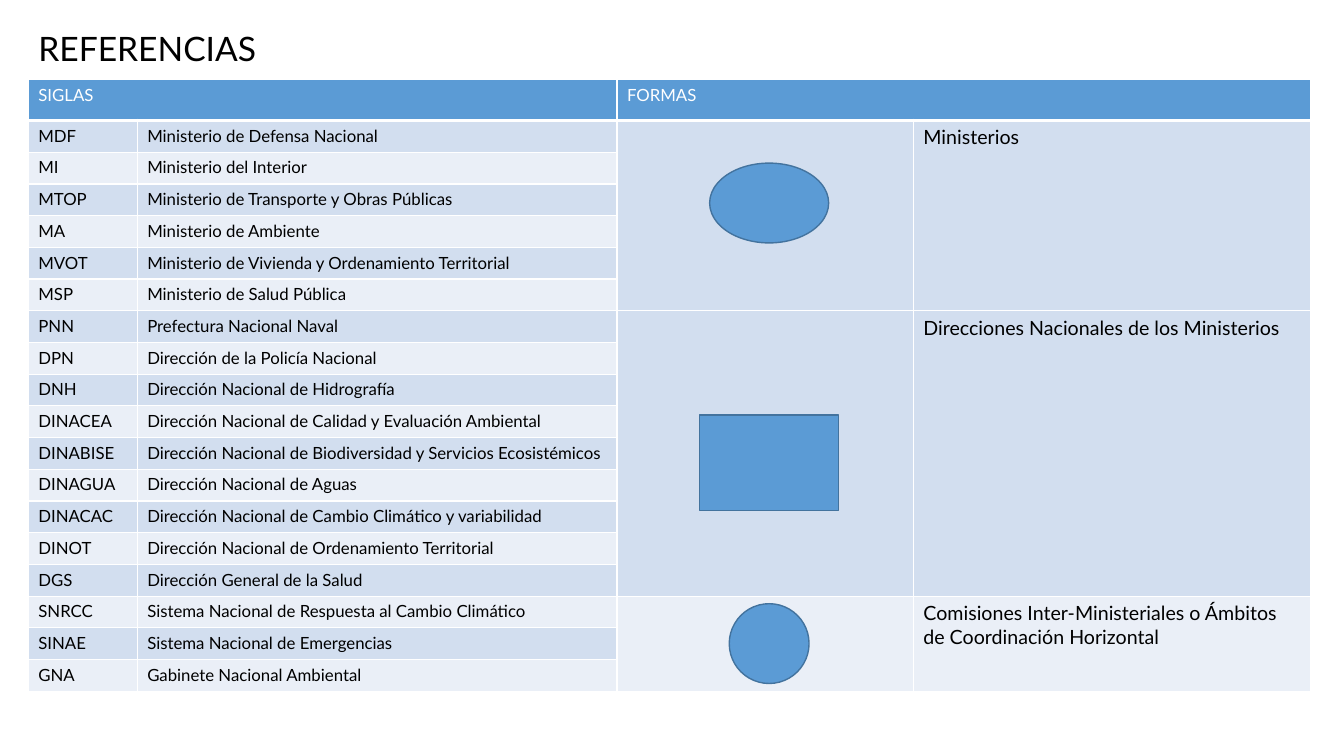
"""Build the REFERENCIAS slide: a table of acronyms beside a key of shapes."""
from lxml.etree import SubElement
from pptx import Presentation
from pptx.dml.color import RGBColor
from pptx.enum.shapes import MSO_SHAPE
from pptx.enum.text import MSO_ANCHOR, PP_ALIGN
from pptx.oxml.ns import qn
from pptx.util import Pt

TITLE = "REFERENCIAS"
HEADINGS = {0: "SIGLAS", 2: "FORMAS"}
ACRONYMS = [
    ("MDF", "Ministerio de Defensa Nacional"),
    ("MI", "Ministerio del Interior"),
    ("MTOP", "Ministerio de Transporte y Obras Públicas"),
    ("MA", "Ministerio de Ambiente"),
    ("MVOT", "Ministerio de Vivienda y Ordenamiento Territorial"),
    ("MSP", "Ministerio de Salud Pública"),
    ("PNN", "Prefectura Nacional Naval"),
    ("DPN", "Dirección de la Policía Nacional"),
    ("DNH", "Dirección Nacional de Hidrografía"),
    ("DINACEA", "Dirección Nacional de Calidad y Evaluación Ambiental"),
    ("DINABISE", "Dirección Nacional de Biodiversidad y Servicios Ecosistémicos"),
    ("DINAGUA", "Dirección Nacional de Aguas"),
    ("DINACAC", "Dirección Nacional de Cambio Climático y variabilidad"),
    ("DINOT", "Dirección Nacional de Ordenamiento Territorial"),
    ("DGS", "Dirección General de la Salud"),
    ("SNRCC", "Sistema Nacional de Respuesta al Cambio Climático"),
    ("SINAE", "Sistema Nacional de Emergencias"),
    ("GNA", "Gabinete Nacional Ambiental"),
]
GROUPS = [
    {"rows": 6, "label": "Ministerios", "shape": MSO_SHAPE.OVAL,
     "size": (85, 57), "middle": 145},
    {"rows": 9, "label": "Direcciones Nacionales de los Ministerios",
     "shape": MSO_SHAPE.RECTANGLE, "size": (99.4, 68), "middle": 330.5},
    {"rows": 3, "label": "Comisiones Inter-Ministeriales o Ámbitos de Coordinación Horizontal",
     "shape": MSO_SHAPE.OVAL, "size": (57, 57), "middle": 459.7},
]
COLORS = {"blue": "5B9BD5", "outline": "43739E", "dark band": "D2DEEF",
          "light band": "EAEFF7", "white": "FFFFFF", "black": "000000"}
FONT = "Lato"
COLUMNS = (77.8, 342.7, 211.7, 283.7)
HEADER_HEIGHT, ROW_HEIGHT = 29.2, 22.65
TABLE_LEFT, TABLE_TOP = 20.2, 56.9
SHAPE_CENTER = 549.4


def color(name):
    return RGBColor.from_string(COLORS[name])


def write(frame, text, size=12, ink="black", anchor=MSO_ANCHOR.TOP, spacing=None):
    frame.vertical_anchor = anchor
    para = frame.paragraphs[0]
    para.alignment = PP_ALIGN.LEFT
    para.line_spacing = spacing
    span = para.add_run()
    span.text = text
    span.font.name = FONT
    span.font.size = Pt(size)
    span.font.color.rgb = color(ink)


def style_cell(cell, fill, bottom=1):
    properties = cell._tc.get_or_add_tcPr()
    for side, width in (("L", 1), ("R", 1), ("T", 1), ("B", bottom)):
        line = SubElement(properties, qn(f"a:ln{side}"), w=str(Pt(width)))
        solid = SubElement(line, qn("a:solidFill"))
        SubElement(solid, qn("a:srgbClr"), val=COLORS["white"])
    cell.fill.solid()
    cell.fill.fore_color.rgb = color(fill)


def band(row):
    return "dark band" if row % 2 else "light band"


def add_references(page):
    count = len(ACRONYMS) + 1
    height = HEADER_HEIGHT + ROW_HEIGHT * len(ACRONYMS)
    table = page.shapes.add_table(count, len(COLUMNS), Pt(TABLE_LEFT), Pt(TABLE_TOP),
                                  Pt(sum(COLUMNS)), Pt(height)).table
    for column, width in zip(table.columns, COLUMNS):
        column.width = Pt(width)
    for index, row in enumerate(table.rows):
        row.height = Pt(ROW_HEIGHT if index else HEADER_HEIGHT)

    for column, heading in HEADINGS.items():
        table.cell(0, column).merge(table.cell(0, column + 1))
        write(table.cell(0, column).text_frame, heading, ink="white")
    for column in range(len(COLUMNS)):
        style_cell(table.cell(0, column), "blue", bottom=3)

    for row, texts in enumerate(ACRONYMS, start=1):
        for column, text in enumerate(texts):
            style_cell(table.cell(row, column), band(row))
            write(table.cell(row, column).text_frame, text)

    first = 1
    for group in GROUPS:
        last = first + group["rows"] - 1
        for column in (2, 3):
            table.cell(first, column).merge(table.cell(last, column))
            for row in range(first, last + 1):
                style_cell(table.cell(row, column), band(first))
        write(table.cell(first, 3).text_frame, group["label"], size=14,
              anchor=MSO_ANCHOR.MIDDLE)
        first = last + 1


def add_key_shape(page, group):
    width, height = group["size"]
    shape = page.shapes.add_shape(group["shape"], Pt(SHAPE_CENTER - width / 2),
                                  Pt(group["middle"] - height / 2), Pt(width), Pt(height))
    shape.shadow.inherit = False
    shape.fill.solid()
    shape.fill.fore_color.rgb = color("blue")
    shape.line.color.rgb = color("outline")
    shape.line.width = Pt(1)


def main():
    deck = Presentation()
    deck.slide_width, deck.slide_height = Pt(960), Pt(540)
    page = deck.slides.add_slide(deck.slide_layouts[5])
    title = page.shapes.title
    title.left, title.top, title.width, title.height = Pt(20.2), Pt(15.8), Pt(828), Pt(41)
    write(title.text_frame, TITLE, size=24, anchor=MSO_ANCHOR.MIDDLE, spacing=0.9)
    add_references(page)
    for group in GROUPS:
        add_key_shape(page, group)
    deck.save("out.pptx")


if __name__ == "__main__":
    main()
